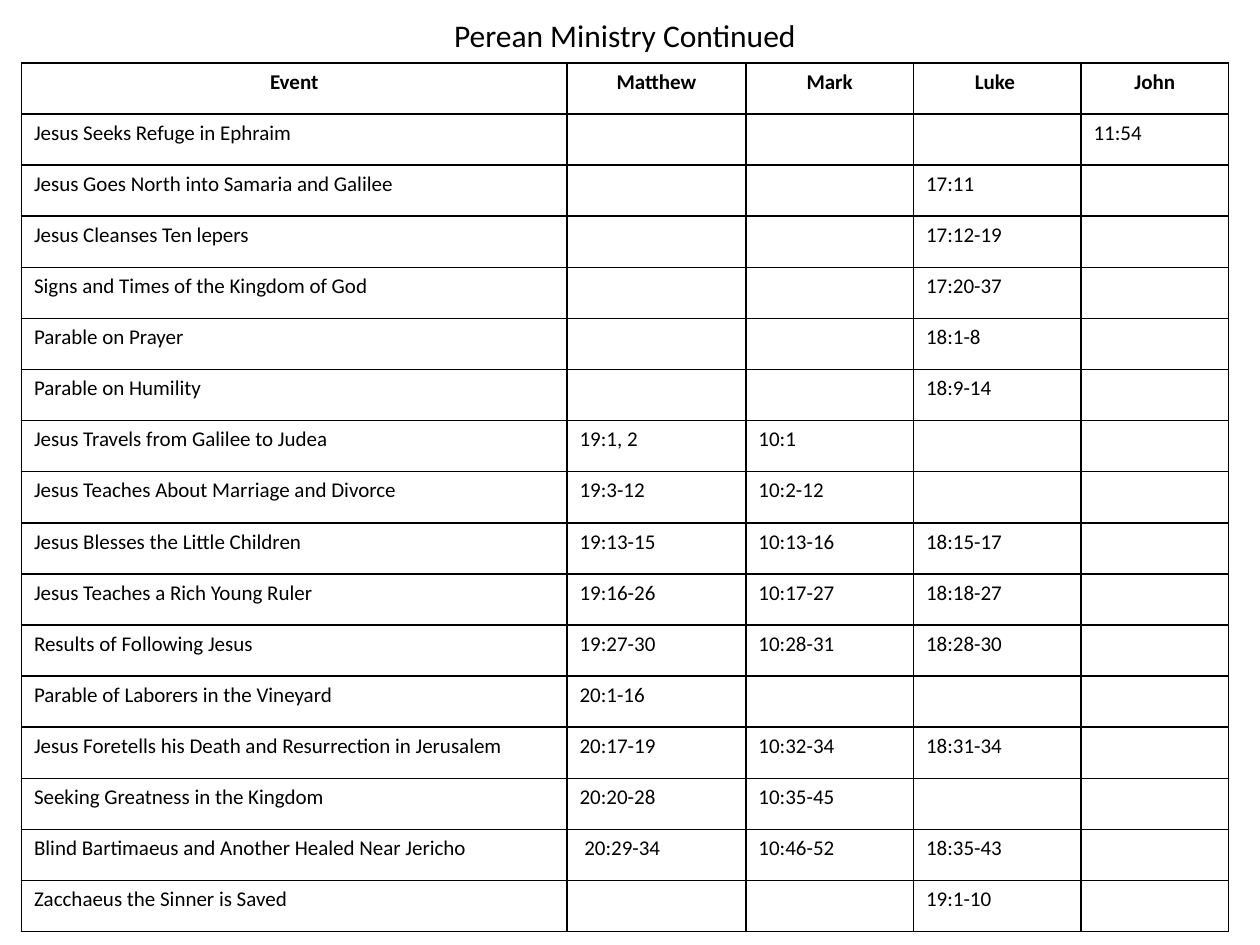
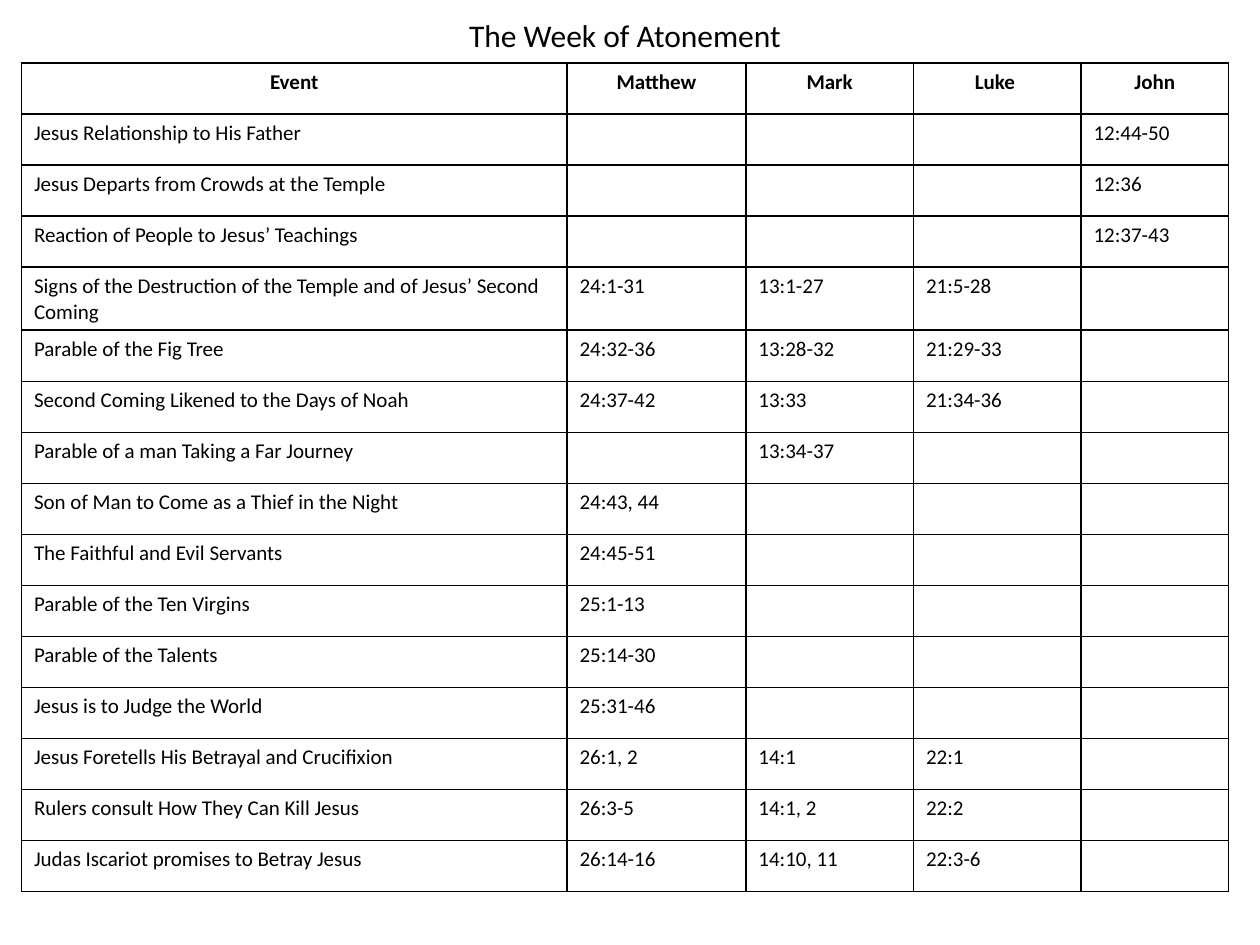
"""Builds two gospel harmony tables, one per slide."""
import pptx
import pptx.util
import pptx.dml.color
import pptx.enum.text
import pptx.oxml
import lxml.etree

Inches, Pt = pptx.util.Inches, pptx.util.Pt
CENTER = pptx.enum.text.PP_ALIGN.CENTER

HEADS = ("Event", "Matthew", "Mark", "Luke ", "John")
PAGES = [
    ("Perean Ministry Continued", [
        ("Jesus Seeks Refuge in Ephraim", "", "", "", "11:54"),
        ("Jesus Goes North into Samaria and Galilee", "", "", "17:11", ""),
        ("Jesus Cleanses Ten lepers", "", "", "17:12-19", ""),
        ("Signs and Times of the Kingdom of God", "", "", "17:20-37", ""),
        ("Parable on Prayer", "", "", "18:1-8", ""),
        ("Parable on Humility", "", "", "18:9-14", ""),
        ("Jesus Travels from Galilee to Judea", "19:1, 2", "10:1", "", ""),
        ("Jesus Teaches About Marriage and Divorce", "19:3-12", "10:2-12", "", ""),
        ("Jesus Blesses the Little Children", "19:13-15", "10:13-16", "18:15-17", ""),
        ("Jesus Teaches a Rich Young Ruler", "19:16-26", "10:17-27", "18:18-27", ""),
        ("Results of Following Jesus", "19:27-30", "10:28-31", "18:28-30", ""),
        ("Parable of Laborers in the Vineyard", "20:1-16", "", "", ""),
        ("Jesus Foretells his Death and Resurrection in Jerusalem",
         "20:17-19", "10:32-34", "18:31-34", ""),
        ("Seeking Greatness in the Kingdom", "20:20-28", "10:35-45", "", ""),
        ("Blind Bartimaeus and Another Healed Near Jericho",
         " 20:29-34", "10:46-52", "18:35-43", ""),
        ("Zacchaeus the Sinner is Saved", "", "", "19:1-10", ""),
    ]),
    ("The Week of Atonement", [
        ("Jesus Relationship to His Father", "", "", "", "12:44-50"),
        ("Jesus Departs from Crowds at the Temple", "", "", "", "12:36"),
        ("Reaction of People to Jesus’ Teachings", "", "", "", "12:37-43"),
        ("Signs of the Destruction of the Temple and of Jesus’ Second Coming",
         "24:1-31", "13:1-27", "21:5-28", ""),
        ("Parable of the Fig Tree", "24:32-36", "13:28-32", "21:29-33", ""),
        ("Second Coming Likened to the Days of Noah",
         "24:37-42", "13:33", "21:34-36", ""),
        ("Parable of a man Taking a Far Journey", "", "13:34-37", "", ""),
        ("Son of Man to Come as a Thief in the Night", "24:43, 44", "", "", ""),
        ("The Faithful and Evil Servants", "24:45-51", "", "", ""),
        ("Parable of the Ten Virgins", "25:1-13", "", "", ""),
        ("Parable of the Talents", "25:14-30", "", "", ""),
        ("Jesus is to Judge the World", "25:31-46", "", "", ""),
        ("Jesus Foretells His Betrayal and Crucifixion",
         "26:1, 2", "14:1", "22:1", ""),
        ("Rulers consult How They Can Kill Jesus", "26:3-5", "14:1, 2", "22:2", ""),
        ("Judas Iscariot promises to Betray Jesus",
         "26:14-16", "14:10, 11", "22:3-6", ""),
    ]),
]

COLORS = {"ink": "000000", "paper": "FFFFFF"}
FONT = "Calibri"
LEFT, TOP, WIDTH = 0.17, 0.5, 9.58
COLS = (4.33, 1.42, 1.33, 1.33, 1.17)
ROW = 6.89 / 17


def color(name):
    return pptx.dml.color.RGBColor.from_string(COLORS[name])


def write(frame, text, size, bold=False, center=False):
    frame.text = text
    para = frame.paragraphs[0]
    if center:
        para.alignment = CENTER
    for run in para.runs:
        run.font.name, run.font.size, run.font.bold = FONT, Pt(size), bold
        run.font.color.rgb = color("ink")


def frame_cell(cell):
    props = cell._tc.get_or_add_tcPr()
    for side in "LRTB":
        line = lxml.etree.SubElement(
            props, pptx.oxml.ns.qn(f"a:ln{side}"), w=str(Pt(1)))
        fill = lxml.etree.SubElement(line, pptx.oxml.ns.qn("a:solidFill"))
        lxml.etree.SubElement(
            fill, pptx.oxml.ns.qn("a:srgbClr"), val=COLORS["ink"])
    cell.fill.background()


def add_grid(slide, rows):
    table = slide.shapes.add_table(
        len(rows), len(COLS), Inches(LEFT), Inches(TOP),
        Inches(WIDTH), Inches(ROW * len(rows))).table
    table.first_row = table.horz_banding = False
    for col, width in zip(table.columns, COLS):
        col.width = Inches(width)
    for r, row in enumerate(rows):
        table.rows[r].height = Inches(ROW)
        for c, text in enumerate(row):
            cell = table.cell(r, c)
            frame_cell(cell)
            if text:
                write(cell.text_frame, text, 12, bold=r == 0, center=r == 0)


def add_title(slide, text):
    box = slide.shapes.add_textbox(
        Inches(LEFT), Inches(0.08), Inches(WIDTH), Inches(0.4))
    box.text_frame.word_wrap = True
    box.text_frame.auto_size = pptx.enum.text.MSO_AUTO_SIZE.SHAPE_TO_FIT_TEXT
    write(box.text_frame, text, 18, center=True)


def main():
    deck = pptx.Presentation()
    deck.slide_width, deck.slide_height = Inches(10), Inches(7.5)
    for title, events in PAGES:
        slide = deck.slides.add_slide(deck.slide_layouts[6])
        slide.background.fill.solid()
        slide.background.fill.fore_color.rgb = color("paper")
        add_grid(slide, [HEADS, *events])
        add_title(slide, title)
    deck.save("out.pptx")


if __name__ == "__main__":
    main()
